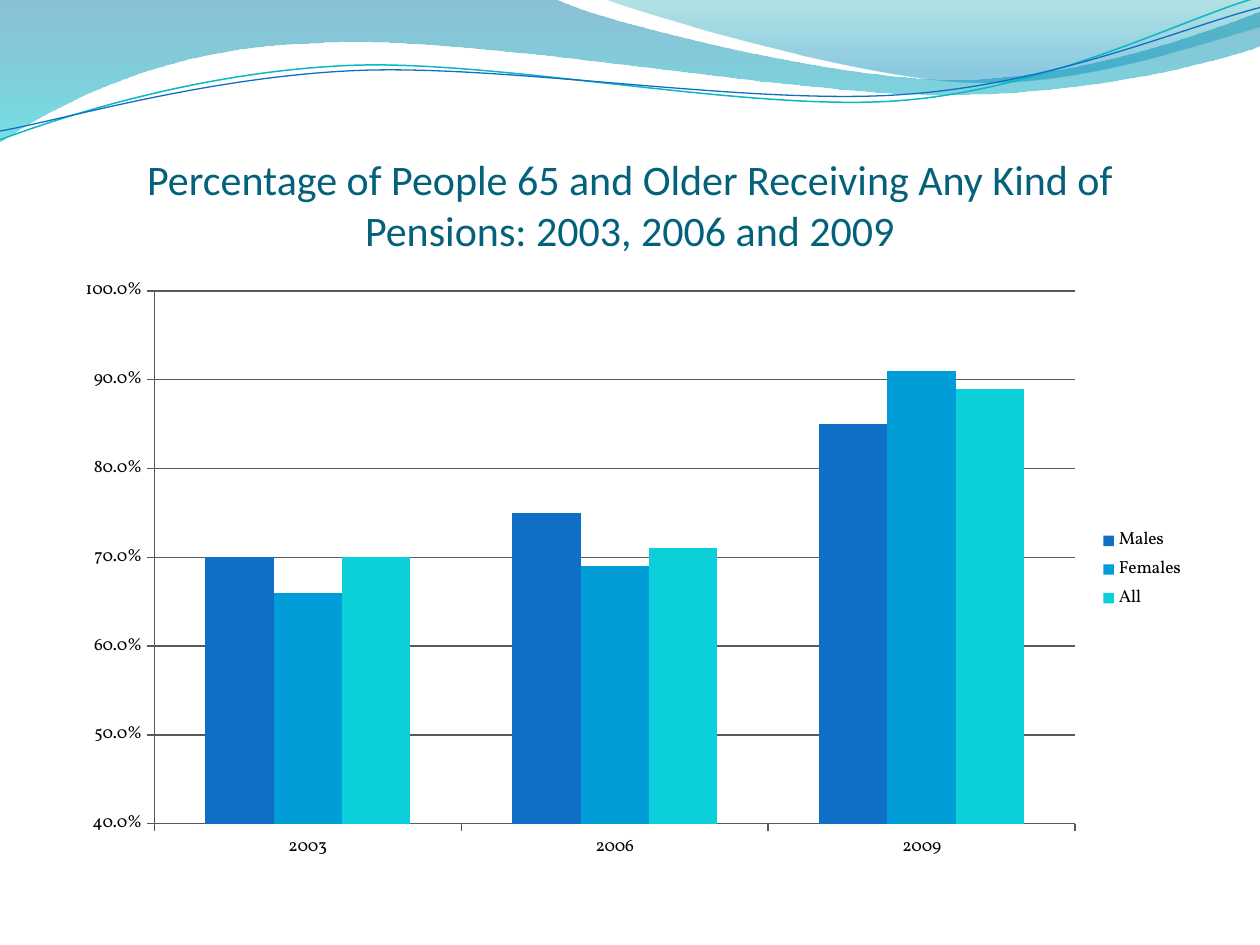
from pptx import Presentation
from pptx.chart.data import CategoryChartData
from pptx.dml.color import RGBColor
from pptx.enum.chart import XL_CHART_TYPE as ChartType, XL_LEGEND_POSITION as LegendPosition
from pptx.enum.chart import XL_TICK_MARK as TickMark
from pptx.enum.text import MSO_ANCHOR as Anchor, PP_ALIGN as Align
from pptx.oxml.ns import qn
from pptx.util import Inches, Pt
from lxml import etree

TITLE_TEAL = RGBColor(0x04, 0x61, 0x7B)
BLACK = RGBColor(0, 0, 0)
GRID_GRAY = RGBColor(0x59, 0x59, 0x59)
BLUE = RGBColor(0x0F, 0x6F, 0xC6)
SKY = RGBColor(0x00, 0x9D, 0xD9)
AQUA = RGBColor(0x0B, 0xD0, 0xD9)
LINE_TEAL = RGBColor(0x0A, 0xB8, 0xBF)
DEEP_TEAL = RGBColor(0x00, 0x74, 0xA1)
BRIGHT_TEAL = RGBColor(0x00, 0xC6, 0xCF)
SEA_GREEN = RGBColor(0x00, 0xA1, 0xA9)
OCEAN = RGBColor(0x00, 0x8B, 0xBF)


def draw_curve(page, start, *segments, closed=False):
    """Draw straight (2 numbers) and cubic Bezier (6 numbers) segments, in inches."""
    points = [(Inches(x), Inches(y)) for segment in (start, *segments)
              for x, y in zip(segment[::2], segment[1::2])]
    builder = page.shapes.build_freeform(*points[0])
    builder.add_line_segments(points[1:], close=closed)
    shape = builder.convert_to_shape()
    shape.shadow.inherit = False
    # Merge each three control points into one Bezier segment
    steps = iter(list(shape._element.iter(qn("a:lnTo"))))
    for segment in segments:
        first = next(steps)
        if len(segment) == 6:
            first.tag = qn("a:cubicBezTo")
            for extra in (next(steps), next(steps)):
                first.append(extra[0])
                extra.getparent().remove(extra)
    return shape


def fill_gradient(shape, stops):
    """Fill from top to bottom with (position, colour, opacity percent) stops."""
    shape.line.fill.background()
    shape.fill.gradient()
    shape.fill.gradient_angle = 270
    for stop, (position, color, opacity) in zip(shape.fill.gradient_stops, stops):
        stop.position = position
        stop.color.rgb = color
    colors = shape._element.spPr.iter(qn("a:srgbClr"))
    for color_node, (_, _, opacity) in zip(colors, stops):
        etree.SubElement(color_node, qn("a:alpha")).set("val", str(opacity * 1000))


deck = Presentation()
deck.slide_width, deck.slide_height = Inches(10), Inches(7.5)
page = deck.slides.add_slide(deck.slide_layouts[5])

# Waves across the top
wide_wave = draw_curve(
    page, (0, 0), (4.4, -0.01),
    (4.76, 0.17, 6.64, 0.63, 7.58, 0.63), (8.53, 0.63, 9.58, 0.26, 10, 0.09),
    (10.01, 0.36),
    (9.83, 0.44, 8.7, 0.76, 7.46, 0.75), (6.22, 0.75, 3.82, 0.28, 2.57, 0.34),
    (1.29, 0.36, 0.46, 0.83, -0.01, 1.13), closed=True)
fill_gradient(wide_wave, [(0, DEEP_TEAL, 45), (1, BRIGHT_TEAL, 55)])

right_wave = draw_curve(
    page, (4.79, -0.01),
    (5.09, 0.11, 6.82, 0.62, 7.69, 0.65), (8.56, 0.69, 9.61, 0.32, 10, 0.21),
    (10, 0), closed=True)
fill_gradient(right_wave, [(0, SEA_GREEN, 30), (0.8, OCEAN, 45)])

# Thin lines under the waves
teal_line = draw_curve(
    page, (0, 1.11), (0.48, 0.93, 1.58, 0.57, 2.77, 0.52),
    (3.95, 0.47, 5.93, 0.89, 7.13, 0.8), (8.33, 0.71, 9.38, 0.15, 9.98, -0.02))
blue_line = draw_curve(
    page, (0, 1.04), (0.47, 0.96, 1.64, 0.61, 2.83, 0.56),
    (4.03, 0.51, 5.97, 0.84, 7.17, 0.75), (8.36, 0.67, 9.41, 0.21, 10, 0.06))
for curve, color, width in [(teal_line, LINE_TEAL, 0.85), (blue_line, BLUE, 0.75)]:
    curve.fill.background()
    curve.line.color.rgb = color
    curve.line.width = Pt(width)

# Title
title = page.shapes.title
title.left, title.top, title.width, title.height = map(Inches, (0.5, 0.77, 9, 1.25))
frame = title.text_frame
frame.word_wrap = True
frame.vertical_anchor = Anchor.BOTTOM
frame.margin_left = frame.margin_right = frame.margin_bottom = 0
frame.margin_top = Inches(0.05)
para = frame.paragraphs[0]
para.alignment = Align.CENTER
span = para.add_run()
span.text = "Percentage of People 65 and Older Receiving Any Kind of Pensions: 2003, 2006 and 2009"
span.font.name = "Calibri"
span.font.size = Pt(24)
span.font.color.rgb = TITLE_TEAL

# Pension chart
pension_series = [
    ("Males", (0.7, 0.75, 0.85), BLUE),
    ("Females", (0.66, 0.69, 0.91), SKY),
    ("All", (0.7, 0.71, 0.89), AQUA),
]
data = CategoryChartData(number_format="0.0%")
data.categories = ["2003", "2006", "2009"]
for name, values, _ in pension_series:
    data.add_series(name, values)
chart = page.shapes.add_chart(ChartType.COLUMN_CLUSTERED, Inches(0.5), Inches(2.12),
                              Inches(9), Inches(4.8), data).chart
chart.has_title = False
chart.font.name = "Vollkorn"
chart.font.size = Pt(10)
chart.font.color.rgb = BLACK

plot = chart.plots[0]
plot.vary_by_categories = False
plot.gap_width = 150
plot.overlap = 0
for series, (_, _, color) in zip(plot.series, pension_series):
    series.format.fill.solid()
    series.format.fill.fore_color.rgb = color

# Axes, gridlines and legend
value_axis = chart.value_axis
value_axis.minimum_scale, value_axis.maximum_scale = 0.4, 1
value_axis.major_unit = 0.1
value_axis.tick_labels.number_format = "0.0%"
value_axis.tick_labels.number_format_is_linked = False
value_axis.has_major_gridlines = True
for axis in (value_axis, chart.category_axis):
    axis.major_tick_mark = TickMark.OUTSIDE
    axis.minor_tick_mark = TickMark.NONE
for part in (value_axis, chart.category_axis, value_axis.major_gridlines):
    part.format.line.color.rgb = GRID_GRAY
    part.format.line.width = Pt(0.75)
chart.has_legend = True
chart.legend.position = LegendPosition.RIGHT
chart.legend.include_in_layout = False

deck.save("out.pptx")
